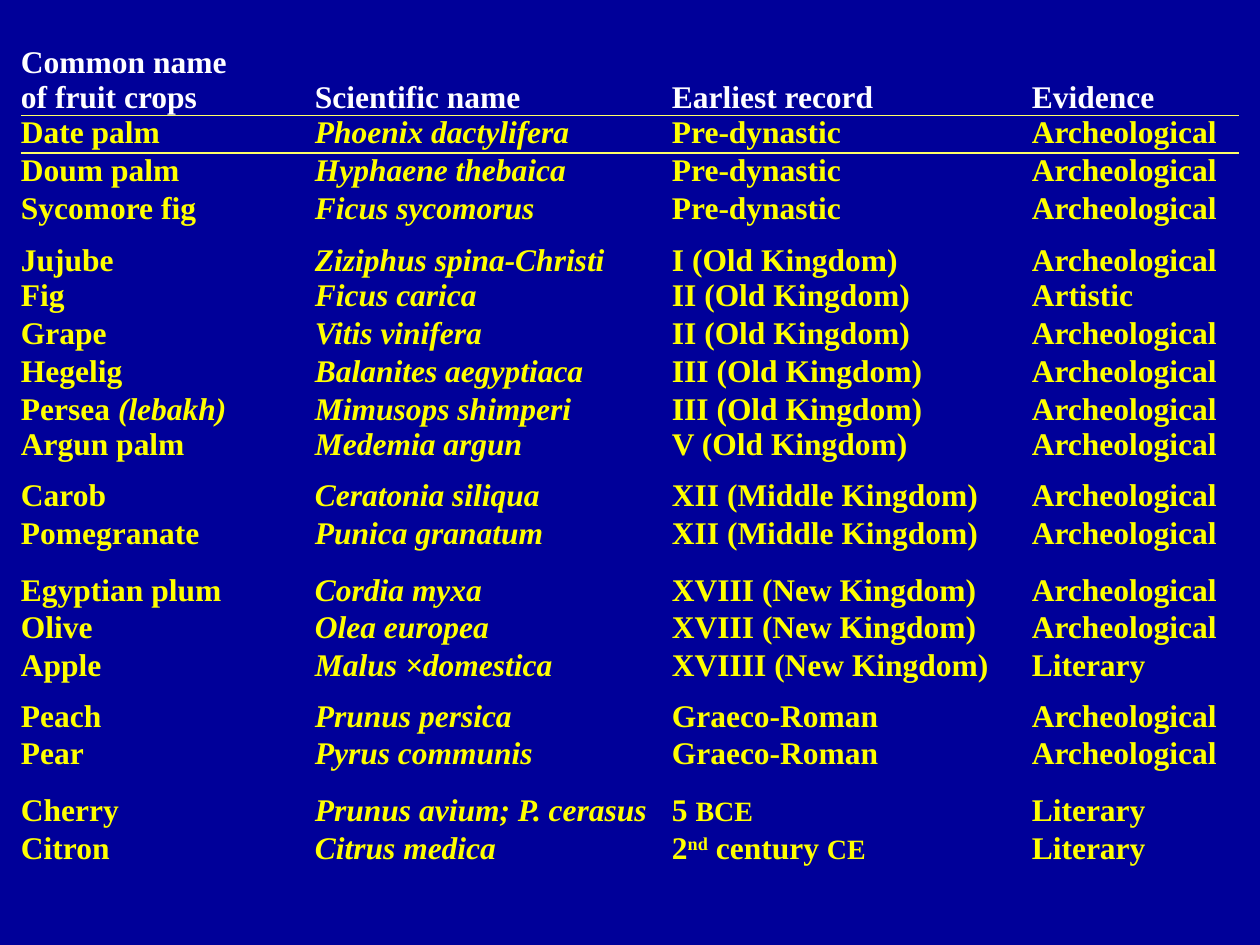
from typing import NamedTuple

from lxml import etree
from pptx import Presentation
from pptx.dml.color import RGBColor
from pptx.enum.text import MSO_ANCHOR
from pptx.oxml.ns import qn
from pptx.util import Pt

BOTTOM = MSO_ANCHOR.BOTTOM
TOP = MSO_ANCHOR.TOP
NAVY = RGBColor(0x00, 0x00, 0x99)
WHITE = RGBColor(0xFF, 0xFF, 0xFF)
YELLOW = RGBColor(0xFF, 0xFF, 0x00)
RULE = RGBColor(0xFF, 0xFF, 0x66)
FONT = "Times New Roman"
NO_GRID = "{2D5ABB26-0587-4C30-8999-92F81FD0307C}"
COLUMNS = (168, 204, 205.7, 118.3)
HEADER_HEIGHT = 36
ROW = 21.6
TIGHT = 19.4


class Run(NamedTuple):
    text: str
    size: float = 18
    italic: bool = False
    baseline: int = 0


class Fruit(NamedTuple):
    name: str | tuple[Run, ...]
    species: str
    record: str | tuple[Run, ...]
    evidence: str = "Archeological"
    height: float = ROW


HEADINGS = ("Common name\nof fruit crops", "Scientific name", "Earliest record", "Evidence")
PERSEA = (Run("Persea "), Run("(lebakh)", italic=True))
BCE = (Run("5 "), Run("BCE", size=16))
CE = (Run("2"), Run("nd", baseline=30000), Run(" century "), Run("CE", size=16))

FRUITS = (
    Fruit("Date palm", "Phoenix dactylifera", "Pre-dynastic"),
    Fruit("Doum palm", "Hyphaene thebaica", "Pre-dynastic"),
    Fruit("Sycomore fig", "Ficus sycomorus", "Pre-dynastic", height=30.2),
    Fruit("Jujube", "Ziziphus spina-Christi", "I (Old Kingdom)", height=TIGHT),
    Fruit("Fig", "Ficus carica", "II (Old Kingdom)", "Artistic"),
    Fruit("Grape", "Vitis vinifera", "II (Old Kingdom)"),
    Fruit("Hegelig", "Balanites aegyptiaca", "III (Old Kingdom)"),
    Fruit(PERSEA, "Mimusops shimperi", "III (Old Kingdom)", height=TIGHT),
    Fruit("Argun palm", "Medemia argun", "V (Old Kingdom)", height=29.5),
    Fruit("Carob", "Ceratonia siliqua", "XII (Middle Kingdom)"),
    Fruit("Pomegranate", "Punica granatum", "XII (Middle Kingdom)", height=32.4),
    Fruit("Egyptian plum", "Cordia myxa", "XVIII (New Kingdom)"),
    Fruit("Olive", "Olea europea", "XVIII (New Kingdom)"),
    Fruit("Apple", "Malus ×domestica", "XVIIII (New Kingdom)", "Literary", 28.8),
    Fruit("Peach", "Prunus persica", "Graeco-Roman"),
    Fruit("Pear", "Pyrus communis", "Graeco-Roman", height=32.4),
    Fruit("Cherry", "Prunus avium; P. cerasus", BCE, "Literary"),
    Fruit("Citron", "Citrus medica", CE, "Literary"),
)


def write(cell, text: str | tuple[Run, ...], *, color: RGBColor = YELLOW,
          italic: bool = False, anchor: MSO_ANCHOR = TOP) -> None:
    cell.margin_left = cell.margin_right = cell.margin_top = cell.margin_bottom = 0
    cell.vertical_anchor = anchor
    cell.fill.background()
    tf = cell.text_frame
    lines = [(Run(t, italic=italic),) for t in text.split("\n")] if isinstance(text, str) else [text]
    for i, line in enumerate(lines):
        p = tf.add_paragraph() if i else tf.paragraphs[0]
        for run in line:
            r = p.add_run()
            r.text = run.text
            f = r.font
            f.name, f.size, f.bold, f.italic = FONT, Pt(run.size), True, run.italic
            f.color.rgb = color
            if run.baseline:
                f._element.set("baseline", str(run.baseline))


def add_border(cell, side: str) -> None:
    ln = etree.Element(qn(f"a:{side}"), w=str(Pt(1)))
    fill = etree.SubElement(ln, qn("a:solidFill"))
    etree.SubElement(fill, qn("a:srgbClr"), val=str(RULE))
    cell._tc.get_or_add_tcPr().insert(0, ln)


def add_fruit_table(s) -> None:
    frame = s.shapes.add_table(len(FRUITS) + 1, len(COLUMNS), Pt(12), Pt(26), Pt(696), Pt(478))
    table = frame.table
    table.first_row = table.horz_banding = False
    table._tbl.tblPr.find(qn("a:tableStyleId")).text = NO_GRID
    for column, width in zip(table.columns, COLUMNS):
        column.width = Pt(width)
    table.rows[0].height = Pt(HEADER_HEIGHT)
    for c, heading in enumerate(HEADINGS):
        write(table.cell(0, c), heading, color=WHITE, anchor=BOTTOM)
        add_border(table.cell(0, c), "lnB")
        add_border(table.cell(1, c), "lnT")
    for i, fruit in enumerate(FRUITS, 1):
        table.rows[i].height = Pt(fruit.height)
        write(table.cell(i, 0), fruit.name)
        write(table.cell(i, 1), fruit.species, italic=True)
        write(table.cell(i, 2), fruit.record)
        write(table.cell(i, 3), fruit.evidence)
    frame.height = Pt(478)


def main() -> None:
    prs = Presentation()
    prs.slide_width, prs.slide_height = Pt(720), Pt(540)
    s = prs.slides.add_slide(prs.slide_layouts[6])
    s.background.fill.solid()
    s.background.fill.fore_color.rgb = NAVY
    add_fruit_table(s)
    prs.save("out.pptx")


if __name__ == "__main__":
    main()
